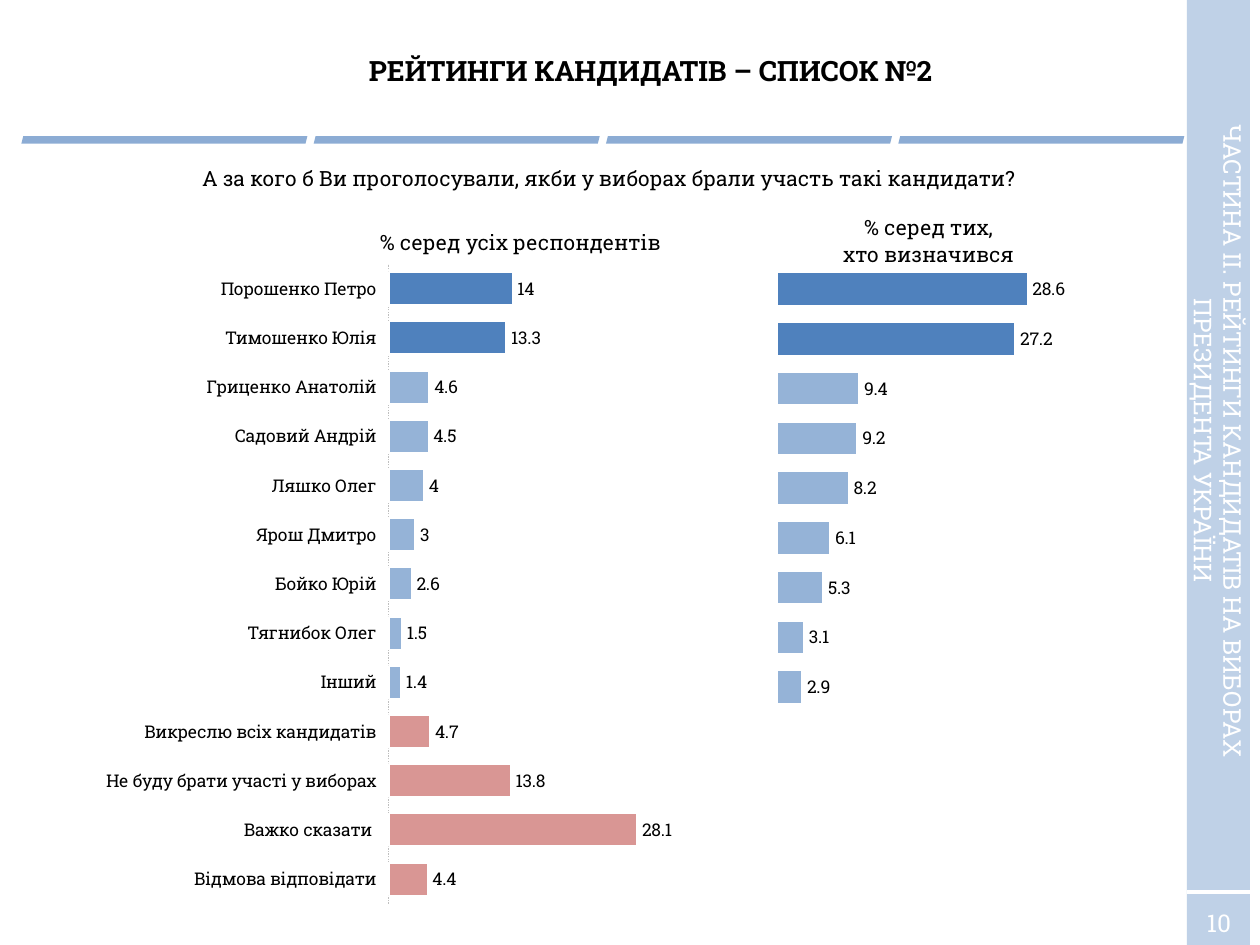
import pptx
import pptx.chart.data
import pptx.dml.color
import pptx.enum.chart
import pptx.enum.shapes
import pptx.enum.text
import pptx.oxml
import pptx.oxml.ns
import pptx.util
from lxml import etree

Inches, Pt = pptx.util.Inches, pptx.util.Pt
RGBColor = pptx.dml.color.RGBColor
MSO_SHAPE = pptx.enum.shapes.MSO_SHAPE
qn = pptx.oxml.ns.qn

BLACK = RGBColor(0x00, 0x00, 0x00)
WHITE = RGBColor(0xFF, 0xFF, 0xFF)
GREY = RGBColor(0xBF, 0xBF, 0xBF)
BLUE = RGBColor(0x4F, 0x81, 0xBD)
LIGHT_BLUE = RGBColor(0x95, 0xB3, 0xD7)
PINK = RGBColor(0xD9, 0x96, 0x94)
FONT = "Roboto Slab"

# Content
TITLE = "РЕЙТИНГИ КАНДИДАТІВ – СПИСОК №2"
# text lines, (left, top, width, height), size, colour, rotation
TEXTS = [
    (["10"], (9.38, 7.15, 0.59, 0.34), 14, WHITE, 0),
    (["А за кого б Ви проголосували, якби у виборах брали участь такі кандидати?"],
     (0.67, 1.17, 8.33, 0.49), 12, BLACK, 0),
    (["% серед усіх респондентів"], (2.84, 1.71, 2.58, 0.42), 12, BLACK, 0),
    (["% серед тих,", "хто визначився"], (6.08, 1.7, 2.58, 0.42), 12, BLACK, 0),
    (["ЧАСТИНА ІI. РЕЙТИНГИ КАНДИДАТІВ НА ВИБОРАХ ПРЕЗИДЕНТА УКРАЇНИ"],
     (6.92, 3.21, 5.5, 0.57), 14, WHITE, 90),
]
# answer, % of all respondents, % of decided voters, bar colour (top to bottom)
RATINGS = [
    ("Порошенко Петро", 14, 28.6, BLUE),
    ("Тимошенко Юлія", 13.3, 27.2, BLUE),
    ("Гриценко Анатолій", 4.6, 9.4, LIGHT_BLUE),
    ("Садовий Андрій", 4.5, 9.2, LIGHT_BLUE),
    ("Ляшко Олег", 4, 8.2, LIGHT_BLUE),
    ("Ярош Дмитро", 3, 6.1, LIGHT_BLUE),
    ("Бойко Юрій", 2.6, 5.3, LIGHT_BLUE),
    ("Тягнибок Олег", 1.5, 3.1, LIGHT_BLUE),
    ("Інший", 1.4, 2.9, LIGHT_BLUE),
    ("Викреслю всіх кандидатів", 4.7, None, PINK),
    ("Не буду брати участі у виборах", 13.8, None, PINK),
    ("Важко сказати ", 28.1, None, PINK),
    ("Відмова відповідати", 4.4, None, PINK),
]


def inches(*lengths):
    return [Inches(length) for length in lengths]


def apply_format(target, **values):
    for name, value in values.items():
        setattr(target, name, value)


def style_font(font, size, colour, bold=False):
    apply_format(font, name=FONT, size=Pt(size), bold=bold)
    font.color.rgb = colour


def add_block(slide, preset, box, colour, opacity):
    block = slide.shapes.add_shape(preset, *inches(*box))
    block.shadow.inherit = False
    block.fill.solid()
    block.fill.fore_color.rgb = colour
    block.line.fill.background()
    fill_colour = block.fill._xPr.find(qn("a:solidFill"))[0]
    etree.SubElement(fill_colour, qn("a:alpha"), val=str(opacity * 1000))


def fill_text(frame, lines, size, colour, bold=False):
    apply_format(frame, word_wrap=True,
                 auto_size=pptx.enum.text.MSO_AUTO_SIZE.NONE,
                 vertical_anchor=pptx.enum.text.MSO_ANCHOR.MIDDLE)
    for index, line in enumerate(lines):
        paragraph = frame.paragraphs[0] if index == 0 else frame.add_paragraph()
        paragraph.text = line
        paragraph.alignment = pptx.enum.text.PP_ALIGN.CENTER
        if index:
            paragraph.space_before = Pt(1)
        style_font(paragraph.font, size, colour, bold)


def add_rating_chart(slide, box, names, values, colours, plot_width, show_names):
    data = pptx.chart.data.CategoryChartData()
    data.categories = names
    data.add_series("Series 1", values)
    chart = slide.shapes.add_chart(
        pptx.enum.chart.XL_CHART_TYPE.BAR_CLUSTERED, *inches(*box), data).chart
    apply_format(chart, has_legend=False, has_title=False)
    style_font(chart.font, 10, BLACK)

    # Axes
    apply_format(chart.value_axis, minimum_scale=0, maximum_scale=45,
                 has_major_gridlines=False, visible=False)
    names_axis = chart.category_axis
    no_tick = pptx.enum.chart.XL_TICK_MARK.NONE
    apply_format(names_axis, visible=show_names, has_major_gridlines=False,
                 major_tick_mark=no_tick, minor_tick_mark=no_tick,
                 tick_label_position=pptx.enum.chart.XL_TICK_LABEL_POSITION.LOW)
    if show_names:
        style_font(names_axis.tick_labels.font, 10, BLACK)
        axis_line = names_axis.format.line
        axis_line.color.rgb = GREY
        axis_line.width = Pt(0.75)
        etree.SubElement(axis_line._ln, qn("a:prstDash"), val="sysDot")

    # Bars and labels
    plot = chart.plots[0]
    apply_format(plot, gap_width=50, vary_by_categories=False, has_data_labels=True)
    apply_format(plot.data_labels, show_value=True, number_format="General",
                 number_format_is_linked=False,
                 position=pptx.enum.chart.XL_LABEL_POSITION.OUTSIDE_END)
    style_font(plot.data_labels.font, 10, BLACK)
    series = plot.series[0]
    bars = [(series, LIGHT_BLUE)]
    bars += [(series.points[i], colour) for i, colour in enumerate(colours)
             if colour != LIGHT_BLUE and values[i] is not None]
    for bar, colour in bars:
        bar.format.fill.solid()
        bar.format.fill.fore_color.rgb = colour
        bar.format.line.color.rgb = WHITE
        bar.format.line.width = Pt(1)

    # Fixed plot area and clear background
    space = chart._chartSpace
    plot_area = space.find(".//" + qn("c:plotArea"))
    for old_layout in plot_area.findall(qn("c:layout")):
        plot_area.remove(old_layout)
    layout = etree.Element(qn("c:layout"))
    plot_area.insert(0, layout)
    manual = etree.SubElement(layout, qn("c:manualLayout"))
    for tag, value in [("layoutTarget", "inner"), ("xMode", "edge"), ("yMode", "edge"),
                       ("x", 0.457), ("y", 0.018), ("w", plot_width), ("h", 0.949)]:
        etree.SubElement(manual, qn("c:" + tag), val=str(value))
    clear = etree.Element(qn("c:spPr"))
    etree.SubElement(clear, qn("a:noFill"))
    etree.SubElement(etree.SubElement(clear, qn("a:ln")), qn("a:noFill"))
    space.find(qn("c:chart")).addnext(clear)


def main():
    deck = pptx.Presentation()
    apply_format(deck, slide_width=Inches(10), slide_height=Inches(7.5))
    slide = deck.slides.add_slide(deck.slide_layouts[5])

    # Title
    title = slide.shapes.title
    title.left, title.top, title.width, title.height = inches(1, 0.18, 8.33, 0.75)
    fill_text(title.text_frame, [TITLE], 16, BLACK, bold=True)

    # Side band, header stripes and page number rule
    add_block(slide, MSO_SHAPE.RECTANGLE, (9.42, 0, 0.5, 7.5), LIGHT_BLUE, 60)
    for stripe in range(4):
        add_block(slide, MSO_SHAPE.PARALLELOGRAM,
                  (0.17 + 2.32 * stripe, 1.08, 2.27, 0.06), BLUE, 65)
    rule = slide.shapes.add_connector(
        pptx.enum.shapes.MSO_CONNECTOR.STRAIGHT, *inches(9.42, 7.08, 9.92, 7.08))
    rule.line.color.rgb = WHITE
    rule.line.width = Pt(2)
    etree.SubElement(rule._element.spPr, qn("a:effectLst"))

    # Charts: bars are listed from the bottom up
    names, all_voters, decided, colours = zip(*reversed(RATINGS))
    numbers = [str(n + 1) for n in range(len(names))]
    add_rating_chart(slide, (3.08, 2, 6.75, 5.41), numbers, decided, colours, 0.464, False)
    add_rating_chart(slide, (0, 2, 6.75, 5.35), names, all_voters, colours, 0.468, True)

    # Question, chart headings, section name and page number
    for lines, box, size, colour, rotation in TEXTS:
        label = slide.shapes.add_textbox(*inches(*box))
        label.rotation = rotation
        fill_text(label.text_frame, lines, size, colour)

    deck.save("out.pptx")


if __name__ == "__main__":
    main()
